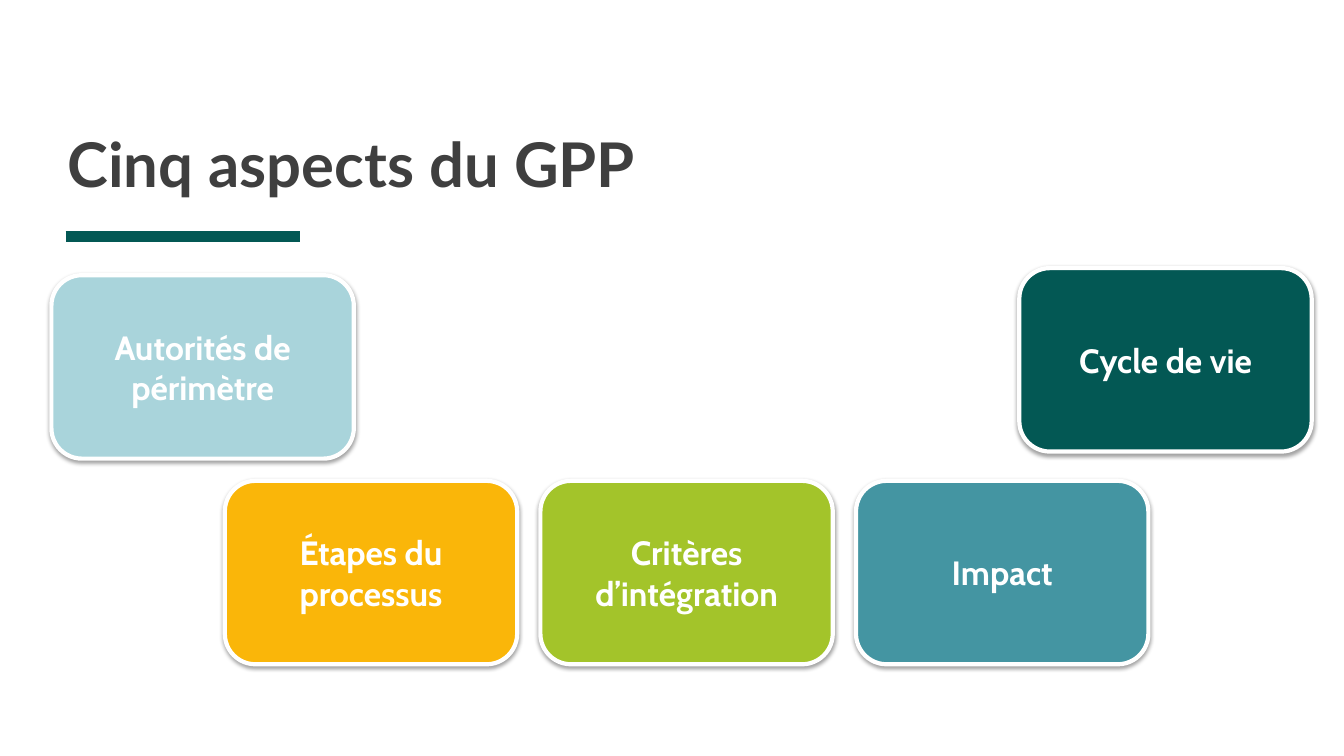
import pptx
import pptx.dml.color
import pptx.enum.shapes
import pptx.enum.text
import pptx.oxml
import pptx.oxml.ns
import pptx.util
from pptx.util import Inches

RGBColor = pptx.dml.color.RGBColor
WHITE = RGBColor(0xFF, 0xFF, 0xFF)
CHARCOAL = RGBColor(0x3F, 0x3F, 0x3F)
DARK_GREEN = RGBColor(0x03, 0x58, 0x54)
PALE_BLUE = RGBColor(0xA9, 0xD4, 0xDB)
YELLOW = RGBColor(0xFA, 0xB6, 0x09)
LIME = RGBColor(0xA3, 0xC4, 0x2A)
TEAL = RGBColor(0x44, 0x95, 0xA2)

CARD_WIDTH = 2.9
CARD_HEIGHT = 1.82
CARD_PITCH = 3.13

SOFT_SHADOW = (
    f'<a:outerShdw {pptx.oxml.ns.nsdecls("a")} blurRad="{pptx.util.Pt(3.1)}" '
    f'dist="{pptx.util.Pt(1.6)}" dir="5400000" rotWithShape="0">'
    '<a:srgbClr val="000000"><a:alpha val="37000"/></a:srgbClr></a:outerShdw>'
)


def format_text(paragraph, font_name, size, color):
    for run in paragraph.runs:
        run.font.name = font_name
        run.font.size = pptx.util.Pt(size)
        run.font.bold = True
        run.font.color.rgb = color


def add_title(slide, text, left, top, width, height):
    """Place the title with a short rule below its bottom edge."""
    title = slide.shapes.title
    title.left, title.top = Inches(left), Inches(top)
    title.width, title.height = Inches(width), Inches(height)
    frame = title.text_frame
    frame.text = text
    frame.word_wrap = True
    frame.auto_size = pptx.enum.text.MSO_AUTO_SIZE.NONE
    frame.vertical_anchor = pptx.enum.text.MSO_ANCHOR.BOTTOM
    frame.margin_left = frame.margin_right = 0
    frame.margin_top = frame.margin_bottom = 0
    paragraph = frame.paragraphs[0]
    paragraph.alignment = pptx.enum.text.PP_ALIGN.LEFT
    paragraph.line_spacing = 0.8
    format_text(paragraph, "Lato", 44, CHARCOAL)

    rule_left, rule_top = left - 0.02, top + height + 0.37
    rule = slide.shapes.add_connector(
        pptx.enum.shapes.MSO_CONNECTOR.STRAIGHT,
        Inches(rule_left), Inches(rule_top),
        Inches(rule_left + 2.33), Inches(rule_top))
    rule.line.color.rgb = DARK_GREEN
    rule.line.width = pptx.util.Pt(8)
    rule._element.spPr.append(pptx.oxml.parse_xml(
        f'<a:effectLst {pptx.oxml.ns.nsdecls("a")}/>'))


def add_card(slide, text, fill, left, top, width=CARD_WIDTH):
    card = slide.shapes.add_shape(
        pptx.enum.shapes.MSO_SHAPE.FLOWCHART_ALTERNATE_PROCESS,
        Inches(left), Inches(top), Inches(width), Inches(CARD_HEIGHT))
    card.fill.solid()
    card.fill.fore_color.rgb = fill
    card.line.color.rgb = WHITE
    card.line.width = pptx.util.Pt(3)
    card.shadow.inherit = False
    effects = card._element.spPr.find(pptx.oxml.ns.qn("a:effectLst"))
    effects.append(pptx.oxml.parse_xml(SOFT_SHADOW))
    frame = card.text_frame
    frame.text = text
    frame.word_wrap = True
    frame.vertical_anchor = pptx.enum.text.MSO_ANCHOR.MIDDLE
    paragraph = frame.paragraphs[0]
    paragraph.alignment = pptx.enum.text.PP_ALIGN.CENTER
    format_text(paragraph, "Cabin", 24, WHITE)


def add_card_row(slide, cards, left, top):
    for index, (text, fill) in enumerate(cards):
        add_card(slide, text, fill, left + index * CARD_PITCH, top)


def main():
    presentation = pptx.Presentation()
    presentation.slide_width = Inches(13.33)
    presentation.slide_height = Inches(7.5)
    slide = presentation.slides.add_slide(presentation.slide_layouts[5])
    add_title(slide, "Cinq aspects du GPP", 0.67, 0.26, 12, 1.72)
    add_card(slide, "Autorités de périmètre", PALE_BLUE, 0.51, 2.73, width=3)
    add_card_row(slide, [
        ("Étapes du processus", YELLOW),
        ("Critères d’intégration", LIME),
        ("Impact", TEAL),
    ], 2.23, 4.77)
    add_card(slide, "Cycle de vie", DARK_GREEN, 10.11, 2.66)
    presentation.save("out.pptx")


if __name__ == "__main__":
    main()
